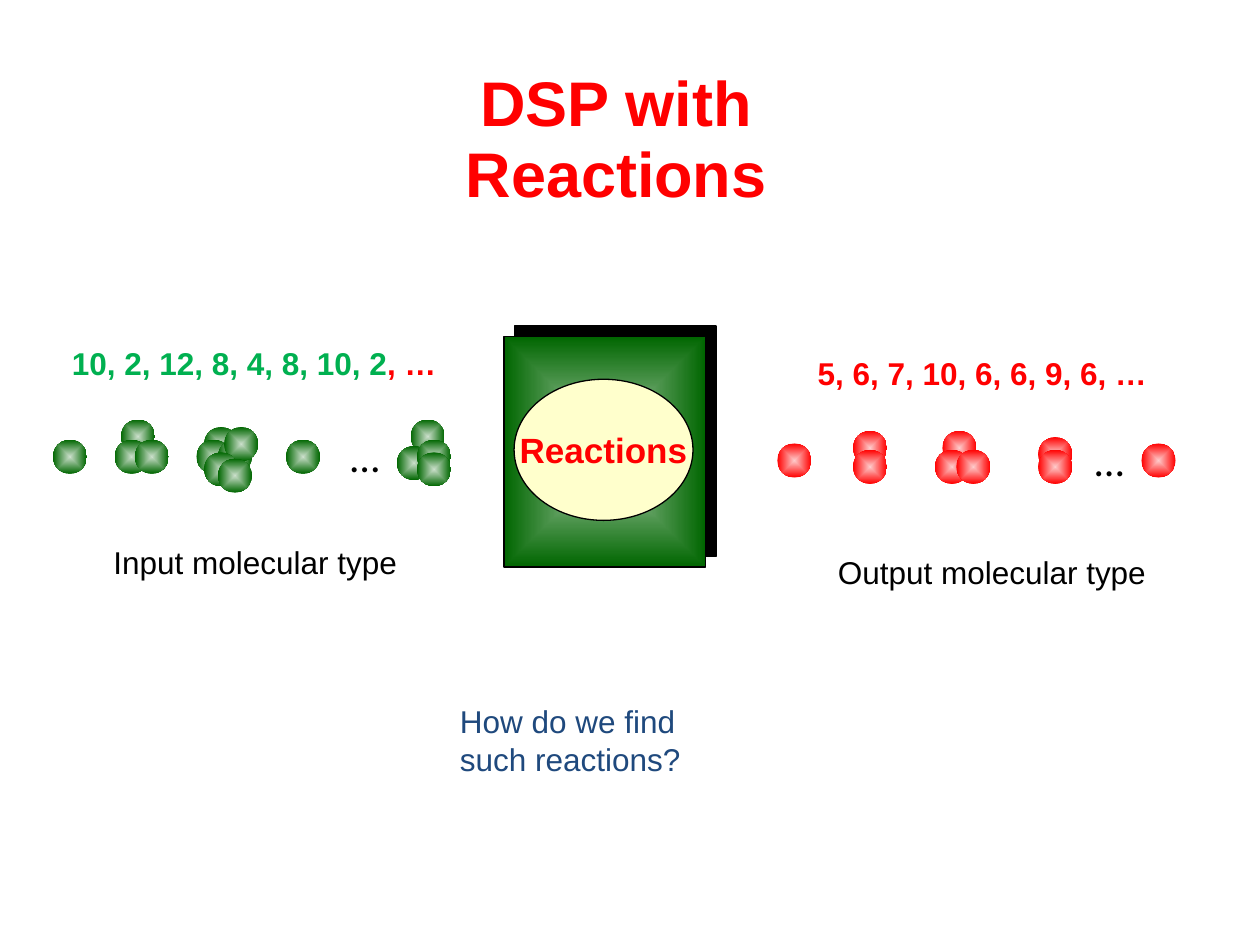
import pptx
import pptx.util
import pptx.dml.color
import pptx.enum.shapes
import pptx.enum.text
import pptx.oxml
import pptx.oxml.ns

Inches, Pt = pptx.util.Inches, pptx.util.Pt
SHAPE = pptx.enum.shapes.MSO_SHAPE
ALIGN = pptx.enum.text.PP_ALIGN
ANCHOR = pptx.enum.text.MSO_ANCHOR
qn = pptx.oxml.ns.qn

THEME = {
    "font": "Arial", "dots_font": "Calibri",
    "title": 36, "dots": 24, "node": 20, "body": 18,
    "red": "FF0000", "green": "00B050", "blue": "1F497D", "black": "000000",
    "cream": "FFFFCC",
    "input_ball": ("CBDFCB", "006600"),
    "output_ball": ("FECBCB", "FF0000"),
    "box": ("A9CBA9", "006600"),
}
BALL = 0.27

# Molecule streams: clusters of ball corners (left, top), then the ellipsis box
STREAMS = [
    ("input_ball", [
        [(0.42, 3.49)],
        [(0.96, 3.33), (0.91, 3.49), (1.07, 3.49)],
        [(1.62, 3.39), (1.56, 3.49), (1.73, 3.49),
         (1.78, 3.39), (1.62, 3.59), (1.73, 3.64)],
        [(2.27, 3.49)],
        [(3.26, 3.33), (3.15, 3.54), (3.31, 3.49), (3.31, 3.59)],
    ], (2.71, 3.49, 0.38, 0.26)),
    ("output_ball", [
        [(6.17, 3.52)],
        [(6.77, 3.42), (6.77, 3.57)],
        [(7.48, 3.42), (7.42, 3.57), (7.59, 3.57)],
        [(8.24, 3.47), (8.24, 3.57)],
        [(9.06, 3.52)],
    ], (8.62, 3.52, 0.38, 0.25)),
]

# Labels: box, bold, runs of (text, colour)
LABELS = [
    ((0.83, 4.17, 2.42, 0.58), False, [("Input molecular type", "black")]),
    ((6.58, 4.25, 2.67, 0.58), False, [("Output molecular type", "black")]),
    ((0.5, 2.67, 3.08, 0.42), True,
     [("10, 2, 12, 8, 4, 8, 10, 2", "green"), (", …", "red")]),
    ((6.42, 2.75, 2.83, 0.42), True, [("5, 6, 7, 10, 6, 6, 9, 6, …", "red")]),
    ((3.58, 5.58, 2.42, 0.58), False, [("How do we find such reactions?", "blue")]),
]


def rgb(value):
    return pptx.dml.color.RGBColor.from_string(value)


def write(sp, runs, size, font="font", bold=False, align=ALIGN.LEFT,
          anchor=ANCHOR.MIDDLE, wrap=True, top=0.04):
    tf = sp.text_frame
    tf.word_wrap = wrap
    tf.vertical_anchor = anchor
    tf.margin_left = tf.margin_right = Inches(0.07)
    tf.margin_top, tf.margin_bottom = Inches(top), Inches(0.04)
    p = tf.paragraphs[0]
    p.alignment = align
    for text, color in runs:
        r = p.add_run()
        r.text = text
        r.font.name = THEME[font]
        r.font.size = Pt(THEME[size])
        r.font.bold = bold
        r.font.color.rgb = rgb(THEME[color])
    return p


def add_text(shapes, box, runs, size, **style):
    return write(shapes.add_textbox(*map(Inches, box)), runs, size, **style)


def add_shape(shapes, kind, box, outlined=False):
    sp = shapes.add_shape(kind, *map(Inches, box))
    sp.shadow.inherit = False
    if outlined:
        sp.line.color.rgb = rgb(THEME["black"])
        sp.line.width = Pt(0.75)
    else:
        sp.line.fill.background()
    return sp


def glow(sp, colors):
    """Gradient from the shape's centre out to its edge."""
    sp.fill.gradient()
    for stop, position, color in zip(sp.fill.gradient_stops, (0, 1), colors):
        stop.position = position
        stop.color.rgb = rgb(color)
    grad = sp._element.spPr.find(qn("a:gradFill"))
    grad.remove(grad.find(qn("a:lin")))
    grad.append(pptx.oxml.parse_xml(
        f'<a:path {pptx.oxml.ns.nsdecls("a")} path="shape">'
        '<a:fillToRect l="50000" t="50000" r="50000" b="50000"/></a:path>'))


def cast_shadow(sp, distance, degrees):
    sp._element.spPr.find(qn("a:effectLst")).append(pptx.oxml.parse_xml(
        f'<a:outerShdw {pptx.oxml.ns.nsdecls("a")} dist="{Pt(distance)}" '
        f'dir="{degrees * 60000}" algn="ctr" rotWithShape="0">'
        f'<a:srgbClr val="{THEME["black"]}"/></a:outerShdw>'))


def main():
    prs = pptx.Presentation()
    prs.slide_width, prs.slide_height = Inches(10), Inches(7.5)
    s = prs.slides.add_slide(prs.slide_layouts[6])

    # Molecule streams
    for ball_colors, clusters, dots_box in STREAMS:
        group = s.shapes.add_group_shape()
        for cluster in clusters:
            for left, top in cluster:
                ball = add_shape(group.shapes, SHAPE.OVAL, (left, top, BALL, BALL))
                glow(ball, THEME[ball_colors])
        add_text(group.shapes, dots_box, [("…", "black")], "dots", font="dots_font")

    # Title
    p = add_text(s.shapes, (2.94, 0.49, 3.9, 0.63), [("DSP with Reactions", "red")],
                 "title", bold=True, align=ALIGN.CENTER, anchor=ANCHOR.TOP,
                 wrap=False, top=0.07)
    p.line_spacing = 0.93

    # Reaction box
    box = add_shape(s.shapes, SHAPE.RECTANGLE, (4, 2.67, 1.6, 1.83), outlined=True)
    glow(box, THEME["box"])
    cast_shadow(box, 8.5, 315)
    node = add_shape(s.shapes, SHAPE.OVAL, (4.08, 3.01, 1.42, 1.12), outlined=True)
    node.fill.solid()
    node.fill.fore_color.rgb = rgb(THEME["cream"])
    write(node, [("Reactions", "red")], "node", bold=True, align=ALIGN.CENTER, wrap=False)

    # Labels
    for label_box, bold, runs in LABELS:
        add_text(s.shapes, label_box, runs, "body", bold=bold)

    prs.save("out.pptx")


if __name__ == "__main__":
    main()
